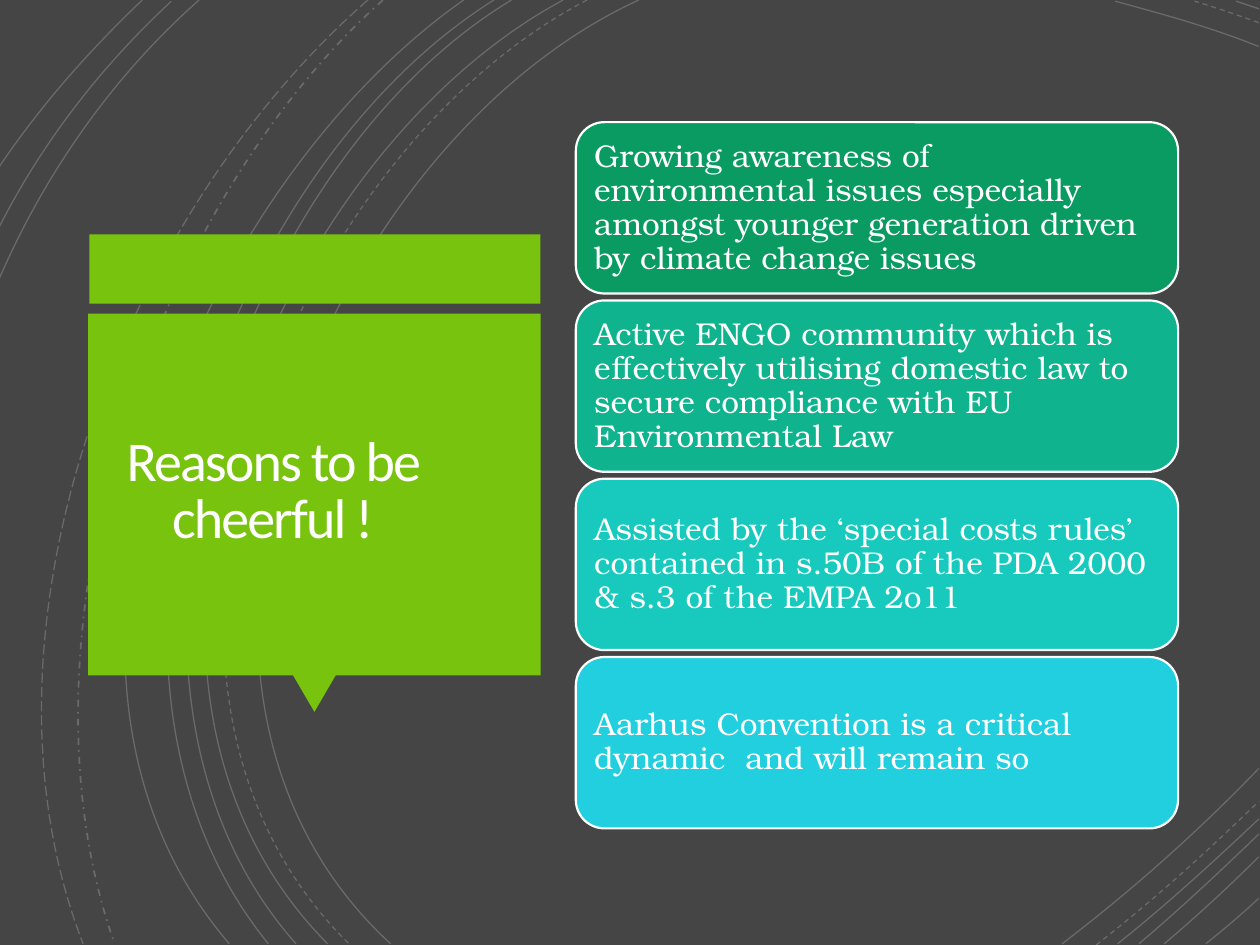
from dataclasses import dataclass

from lxml.etree import SubElement
from pptx import Presentation
from pptx.dml.color import RGBColor
from pptx.enum.dml import MSO_LINE_DASH_STYLE as Dash
from pptx.enum.shapes import MSO_SHAPE as Shape
from pptx.enum.text import MSO_ANCHOR as Anchor, MSO_AUTO_SIZE as AutoSize, PP_ALIGN as Align
from pptx.oxml.ns import qn
from pptx.util import Inches, Pt


@dataclass(frozen=True)
class Theme:
    background: str = "454545"
    accent: str = "78C30D"
    white: str = "FFFFFF"
    title_color: str = "FFFEFF"
    title_font: str = "Calibri"
    body_font: str = "TeX Gyre Bonum"
    title_size: int = 32
    body_size: int = 18
    arc_opacity: int = 20


THEME = Theme()
TITLE = "Reasons to be cheerful !"
REASONS = [
    ("Growing awareness of environmental issues especially amongst younger "
     "generation driven by climate change issues", "099B62"),
    ("Active ENGO community which is effectively utilising domestic law to "
     "secure compliance with EU Environmental Law", "0FB38D"),
    ("Assisted by the ‘special costs rules’ contained in s.50B of the PDA 2000 "
     "& s.3 of the EMPA 2o11", "17CABD"),
    ("Aarhus Convention is a critical dynamic  and will remain so", "21CFDF"),
]
# Each arc is a cubic curve: start, two controls, end.
SOLID_ARCS = [
    # left sweep
    [(5.07, 0), (2.56, 1.15), (0.83, 5.4), (3.1, 7.49)],
    [(4.47, 0), (2.11, 1.27), (0.5, 5.37), (2.6, 7.49)],
    [(4.06, 0), (1.85, 1.33), (0.5, 5.41), (2.35, 7.49)],
    [(3.92, 0), (1.72, 1.38), (0.38, 5.34), (2.13, 7.49)],
    [(3.68, 0), (1.58, 1.47), (-0.07, 5.29), (1.82, 7.49)],
    # top left corner
    [(1.58, 0), (0.88, 0.62), (0.35, 1.39), (-0.01, 2.22)],
    [(1.36, 0.01), (0.79, 0.54), (0.33, 1.14), (-0.01, 1.81)],
    [(1.13, 0), (0.71, 0.4), (0.32, 0.84), (-0.01, 1.33)],
    # top right corner
    [(9.99, 0.37), (9.62, 0.22), (9.22, 0.11), (8.85, 0.01)],
    [(9.99, 0.07), (9.93, 0.05), (9.87, 0.03), (9.81, 0.01)],
    # bottom right corner
    [(8.43, 7.49), (8.98, 7.07), (9.51, 6.6), (9.99, 6.1)],
    [(8.87, 7.49), (9.26, 7.18), (9.63, 6.84), (9.99, 6.5)],
    [(9.04, 7.49), (9.37, 7.21), (9.68, 6.92), (9.99, 6.62)],
    [(9.24, 7.49), (9.5, 7.27), (9.75, 7.04), (9.99, 6.8)],
    [(9.57, 7.49), (9.71, 7.38), (9.85, 7.26), (9.99, 7.13)],
]
DASHED_ARCS = [
    [(4.66, 0), (2.26, 1.25), (0.63, 5.38), (2.77, 7.49)],
    [(9.99, 0.18), (9.82, 0.12), (9.65, 0.06), (9.48, 0.01)],
    [(8.7, 7.5), (9.15, 7.15), (9.58, 6.76), (9.99, 6.36)],
]
DASH_DOT_ARC = [(3.04, 0), (1.17, 1.66), (0.06, 5.09), (0.91, 7.49)]
LONG_DASH_ARC = [(2.92, 0), (0.98, 1.69), (-0.31, 4.99), (0.66, 7.49)]


def rgb(color):
    return RGBColor.from_string(color)


def bend(freeform):
    """Turn the three straight segments of a freeform into one cubic curve."""
    segments = list(freeform.element.iter(qn("a:lnTo")))
    outline = segments[0].getparent()
    curve = SubElement(outline, qn("a:cubicBezTo"))
    for segment in segments:
        curve.append(segment[0])
        outline.remove(segment)


def add_arc(slide, controls, dash=Dash.SOLID, width=0.75):
    start, *rest = [(Inches(x), Inches(y)) for x, y in controls]
    builder = slide.shapes.build_freeform(*start)
    builder.add_line_segments(rest, close=False)
    arc = builder.convert_to_shape()
    bend(arc)
    arc.shadow.inherit = False
    arc.fill.background()
    arc.line.width = Pt(width)
    arc.line.dash_style = dash
    arc.line.color.rgb = rgb(THEME.white)
    color = arc.element.spPr.find(".//" + qn("a:srgbClr"))
    SubElement(color, qn("a:alpha"), val=str(THEME.arc_opacity * 1000))


def add_block(slide, kind, left, top, width, height, fill, outline=None):
    block = slide.shapes.add_shape(
        kind, Inches(left), Inches(top), Inches(width), Inches(height))
    block.shadow.inherit = False
    block.fill.solid()
    block.fill.fore_color.rgb = rgb(fill)
    if outline:
        block.line.color.rgb = rgb(outline)
        block.line.width = Pt(1.25)
    else:
        block.line.fill.background()
    return block


def write(shape, text, *, font, size, color, align, line_spacing, inset, tracking=0):
    frame = shape.text_frame
    frame.word_wrap = True
    frame.auto_size = AutoSize.NONE
    frame.vertical_anchor = Anchor.MIDDLE
    frame.margin_left = frame.margin_right = Inches(inset)
    frame.margin_top = frame.margin_bottom = Inches(inset)
    paragraph = frame.paragraphs[0]
    paragraph.alignment = align
    paragraph.line_spacing = line_spacing
    run = paragraph.add_run()
    run.text = text
    run.font.name = font
    run.font.size = Pt(size)
    run.font.color.rgb = rgb(color)
    if tracking:
        run.font._element.set("spc", str(round(tracking * 100)))


def add_backdrop(slide):
    slide.background.fill.solid()
    slide.background.fill.fore_color.rgb = rgb(THEME.background)
    for controls in SOLID_ARCS:
        add_arc(slide, controls)
    for controls in DASHED_ARCS:
        add_arc(slide, controls, Dash.DASH)
    add_arc(slide, DASH_DOT_ARC, Dash.DASH_DOT, width=1)
    add_arc(slide, LONG_DASH_ARC, Dash.LONG_DASH)


def add_title_callout(slide):
    add_block(slide, Shape.RECTANGLE, 0.71, 1.86, 3.58, 0.55, THEME.accent)
    pointer = add_block(slide, Shape.ISOSCELES_TRIANGLE, 2.32, 5.35, 0.35, 0.3, THEME.accent)
    pointer.rotation = 180
    add_block(slide, Shape.RECTANGLE, 0.7, 2.49, 3.59, 2.87, THEME.accent)

    title = slide.shapes.title
    title.left, title.top = Inches(0.73), Inches(2.57)
    title.width, title.height = Inches(2.87), Inches(2.69)
    write(title, TITLE, font=THEME.title_font, size=THEME.title_size,
          color=THEME.title_color, align=Align.CENTER, line_spacing=0.85,
          inset=0.25, tracking=-1.1)
    # Bring the title in front of the callout.
    title.element.getparent().append(title.element)


def add_reason_cards(slide, left=4.57, top=0.97, width=4.78, height=1.36, pitch=1.415):
    for row, (reason, fill) in enumerate(REASONS):
        card = add_block(slide, Shape.ROUNDED_RECTANGLE, left, top + row * pitch,
                         width, height, fill, outline=THEME.white)
        write(card, reason, font=THEME.body_font, size=THEME.body_size,
              color=THEME.white, align=Align.LEFT, line_spacing=0.9, inset=0.08)


def main():
    deck = Presentation()
    deck.slide_width, deck.slide_height = Inches(10), Inches(7.5)
    slide = deck.slides.add_slide(deck.slide_layouts.get_by_name("Title Only"))
    add_backdrop(slide)
    add_title_callout(slide)
    add_reason_cards(slide)
    deck.save("out.pptx")


if __name__ == "__main__":
    main()
